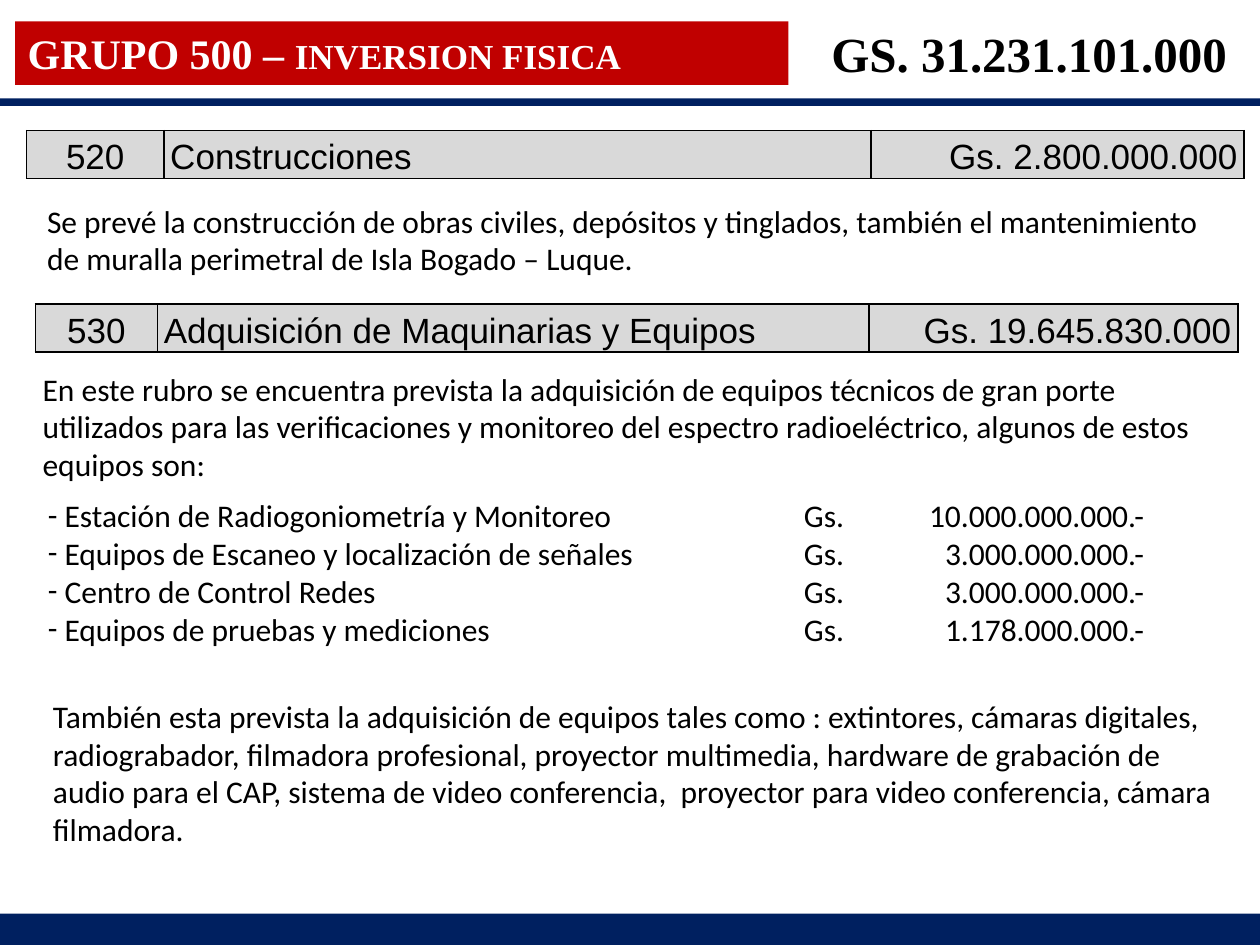
from lxml.etree import SubElement
from pptx import Presentation
from pptx.dml.color import RGBColor
from pptx.enum.shapes import MSO_SHAPE
from pptx.enum.text import MSO_ANCHOR, MSO_AUTO_SIZE, PP_ALIGN, PP_PARAGRAPH_ALIGNMENT
from pptx.oxml.ns import qn
from pptx.util import Pt

COLORS = {"red": "C00000", "navy": "002060", "gray": "D9D9D9",
          "black": "000000", "white": "FFFFFF"}
SERIF, SANS, BODY = "Times New Roman", "Arial", "Calibri"

TITLE = [("GRUPO 500 – ", 24), ("INVERSION FISICA", 20)]
TOTAL = "GS. 31.231.101.000"
BARS = [(0, 522, 720, 18), (0, 56.2, 720, 4.3)]
# left, top, column widths, cells
TABLES = [
    (15.2, 74.6, (78.5, 404, 213.2),
     ("520", "Construcciones", "Gs. 2.800.000.000")),
    (20.2, 173.7, (69.8, 406.6, 210.8),
     ("530", "Adquisición de Maquinarias y Equipos", "Gs. 19.645.830.000")),
]
ALIGNS = (PP_ALIGN.CENTER, PP_ALIGN.LEFT, PP_ALIGN.RIGHT)
NOTES = [
    ((19.8, 111.6, 674.6, 51),
     "Se prevé la construcción de obras civiles, depósitos y tinglados, también el "
     "mantenimiento de muralla perimetral de Isla Bogado – Luque."),
    ((17.3, 207.7, 688.3, 94.5),
     "En este rubro se encuentra prevista la adquisición de equipos técnicos de gran "
     "porte utilizados para las verificaciones y monitoreo del espectro radioeléctrico, "
     "algunos de estos equipos son:"),
    ((23.2, 394.6, 686, 94.5),
     "También esta prevista la adquisición de equipos tales como : extintores, cámaras "
     "digitales, radiograbador, filmadora profesional, proyector multimedia, hardware de "
     "grabación de audio para el CAP, sistema de video conferencia,  proyector para video "
     "conferencia, cámara filmadora."),
]
LIST_BOX = (20.2, 280.1, 688.3, 94.5)
ITEMS = [
    ("Estación de Radiogoniometría y Monitoreo", "10.000.000.000.-"),
    ("Equipos de Escaneo y localización de señales", "3.000.000.000.-"),
    ("Centro de Control Redes", "3.000.000.000.-"),
    ("Equipos de pruebas y mediciones", "1.178.000.000.-"),
]
INDENT = 9.5
TABS = [(432, "l"), (626.5, "r")]


def color(name):
    return RGBColor.from_string(COLORS[name])


def paint(thing, name):
    thing.fill.solid()
    thing.fill.fore_color.rgb = color(name)


def place(shape, box):
    shape.left, shape.top, shape.width, shape.height = map(Pt, box)


def write(para, text, size=18, font=BODY, ink="black", bold=False):
    run = para.add_run()
    run.text = text
    run.font.size, run.font.name, run.font.bold = Pt(size), font, bold
    run.font.color.rgb = color(ink)


def frame(shape, anchor=MSO_ANCHOR.TOP):
    text = shape.text_frame
    text.word_wrap = True
    text.auto_size = MSO_AUTO_SIZE.NONE
    text.vertical_anchor = anchor
    return text


def add_bar(box, name):
    bar = slide.shapes.add_shape(MSO_SHAPE.RECTANGLE, *map(Pt, box))
    bar.shadow.inherit = False
    bar.line.fill.background()
    paint(bar, name)
    return bar


def add_border(cell):
    props = cell._tc.get_or_add_tcPr()
    for side in ("lnL", "lnR", "lnT", "lnB"):
        line = SubElement(props, qn("a:" + side), w=str(Pt(1)))
        fill = SubElement(line, qn("a:solidFill"))
        SubElement(fill, qn("a:srgbClr"), val=COLORS["black"])


def add_row(left, top, widths, texts):
    """Add a one-row budget table."""
    table = slide.shapes.add_table(1, len(texts), Pt(left), Pt(top),
                                   Pt(sum(widths)), Pt(27.5)).table
    table.first_row = table.horz_banding = False
    for col, width, cell, text, align in zip(
            table.columns, widths, table.rows[0].cells, texts, ALIGNS):
        col.width = Pt(width)
        add_border(cell)
        paint(cell, "gray")
        cell.margin_left = cell.margin_right = Pt(3.6)
        cell.margin_top = cell.margin_bottom = 0
        cell.vertical_anchor = MSO_ANCHOR.MIDDLE
        para = cell.text_frame.paragraphs[0]
        para.alignment, para.line_spacing = align, 1.15
        write(para, text, 20, SANS)


def set_list(para):
    """Give a paragraph a dash bullet and the tab stops of the amounts."""
    para.space_before = Pt(0)
    props = para._p.get_or_add_pPr()
    props.set("marL", str(Pt(INDENT)))
    props.set("indent", str(-Pt(INDENT)))
    SubElement(props, qn("a:buFont"), typeface=BODY)
    SubElement(props, qn("a:buChar"), char="-")
    stops = SubElement(props, qn("a:tabLst"))
    for pos, align in TABS:
        SubElement(stops, qn("a:tab"), pos=str(Pt(pos)), algn=align)


deck = Presentation()
deck.slide_width, deck.slide_height = Pt(720), Pt(540)
slide = deck.slides.add_slide(deck.slide_layouts[1])

title = slide.shapes.title
place(title, (8.6, 12.2, 442, 36.4))
paint(title, "red")
para = frame(title).paragraphs[0]
para.alignment = PP_ALIGN.LEFT
for text, size in TITLE:
    write(para, text, size, SERIF, "white", True)

total = add_bar((468, 10.1, 252, 41.2), "white")
para = frame(total).paragraphs[0]
para.alignment = PP_ALIGN.LEFT
write(para, TOTAL, 28, SERIF, bold=True)

for box in BARS:
    add_bar(box, "navy")
for row in TABLES:
    add_row(*row)
for box, text in NOTES:
    note = slide.shapes.add_textbox(*map(Pt, box))
    write(frame(note).paragraphs[0], text)

body = slide.placeholders[1]
place(body, LIST_BOX)
lines = frame(body)
for i, (name, price) in enumerate(ITEMS):
    para = lines.add_paragraph() if i else lines.paragraphs[0]
    set_list(para)
    write(para, f"{name}\tGs.\t{price}")

deck.save("out.pptx")
